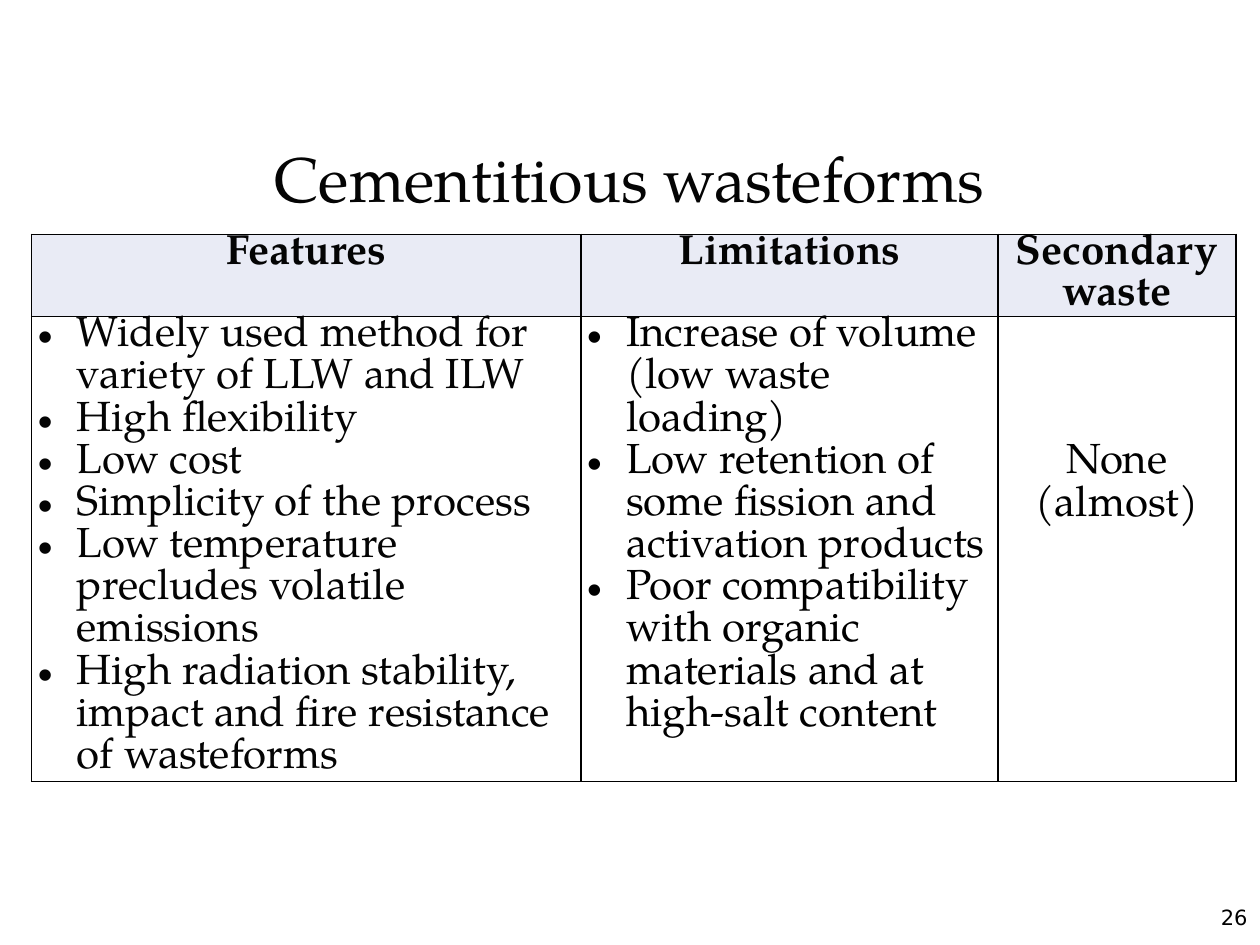
from lxml import etree
from pptx import Presentation
from pptx import util as u
from pptx.dml.color import RGBColor
from pptx.enum import text
from pptx.oxml.ns import qn

COLORS = {"ink": "040404", "black": "000000", "header": "E9EBF5"}
SERIF, SANS = "TeX Gyre Pagella", "DejaVu Sans"
WIDTH, HEIGHT = u.Inches(10), u.Inches(7.5)
COLUMNS = (4.36, 3.31, 1.89)
ROWS = (0.65, 3.69)
HEADERS = ("Features", "Limitations", "Secondary waste")
FEATURES = (
    "Widely used method for variety of LLW and ILW",
    "High flexibility",
    "Low cost",
    "Simplicity of the process",
    "Low temperature precludes volatile emissions",
    "High radiation stability, impact and fire resistance of wasteforms",
)
LIMITATIONS = (
    "Increase of volume (low waste loading)",
    "Low retention of some fission and activation products",
    "Poor compatibility with organic materials and at high-salt content",
)
LEFT, CENTER, RIGHT = (text.PP_ALIGN.LEFT, text.PP_ALIGN.CENTER,
                       text.PP_ALIGN.RIGHT)


def share(left, top, width, height):
    """Turn shares of the slide's size into a box of lengths."""
    return (int(left * WIDTH), int(top * HEIGHT),
            int(width * WIDTH), int(height * HEIGHT))


def set_all(obj, values):
    """Set each attribute named in a dict of format values."""
    for name, value in values.items():
        setattr(obj, name, value)


def add_bullet(p, indent):
    """Give a paragraph a round bullet with a hanging indent."""
    pPr = p._p.get_or_add_pPr()
    pPr.set("marL", str(indent))
    pPr.set("indent", str(-indent))
    etree.SubElement(pPr, qn("a:buFont"), typeface="Arial")
    etree.SubElement(pPr, qn("a:buChar"), char="•")


def write(tf, lines, color, font, para, bullets=False):
    """Fill a text frame with equally formatted paragraphs."""
    for i, line in enumerate(lines):
        p = tf.paragraphs[0] if i == 0 else tf.add_paragraph()
        set_all(p, {"space_before": u.Pt(0), "space_after": u.Pt(0), **para})
        if bullets:
            add_bullet(p, u.Inches(0.31))
        r = p.add_run()
        r.text = line
        set_all(r.font, font)
        r.font.color.rgb = RGBColor.from_string(COLORS[color])


def add_borders(cell):
    """Draw a thin black line on each side of a cell."""
    tcPr = cell._tc.get_or_add_tcPr()
    for i, side in enumerate(("lnL", "lnR", "lnT", "lnB")):
        ln = etree.Element(qn(f"a:{side}"), w=str(u.Pt(1)))
        fill = etree.SubElement(ln, qn("a:solidFill"))
        etree.SubElement(fill, qn("a:srgbClr"), val=COLORS["black"])
        tcPr.insert(i, ln)


def add_title(s, box):
    """Place the slide title in its placeholder."""
    sp = s.shapes.title
    set_all(sp, dict(zip(("left", "top", "width", "height"), box)))
    tf = sp.text_frame
    set_all(tf, {"word_wrap": True, "auto_size": text.MSO_AUTO_SIZE.NONE,
                 "vertical_anchor": text.MSO_ANCHOR.TOP})
    write(tf, ["Cementitious wasteforms"], "ink",
          {"size": u.Pt(36), "name": SERIF},
          {"alignment": CENTER, "line_spacing": u.Pt(44)})


def fill_cell(cell, lines, color, align, bold=False, bullets=False, top=0):
    """Format one table cell and write its text."""
    set_all(cell, {"margin_left": u.Inches(0.05),
                   "margin_right": u.Inches(0.05),
                   "margin_top": u.Inches(top), "margin_bottom": 0,
                   "vertical_anchor": text.MSO_ANCHOR.TOP})
    if bold:
        cell.fill.solid()
        cell.fill.fore_color.rgb = RGBColor.from_string(COLORS["header"])
    else:
        cell.fill.background()
    add_borders(cell)
    write(cell.text_frame, lines, color,
          {"size": u.Pt(24), "name": SERIF, "bold": bold},
          {"alignment": align, "line_spacing": u.Pt(23.4 if bold else 24.1)},
          bullets)


def add_comparison(s, box):
    """Place the table of features, limitations and secondary waste."""
    table = s.shapes.add_table(len(ROWS), len(COLUMNS), *box).table
    for column, share_of_width in zip(table.columns, COLUMNS):
        column.width = int(box[2] * share_of_width / sum(COLUMNS))
    for row, share_of_height in zip(table.rows, ROWS):
        row.height = int(box[3] * share_of_height / sum(ROWS))
    for i, header in enumerate(HEADERS):
        fill_cell(table.cell(0, i), [header], "ink", CENTER, bold=True)
    fill_cell(table.cell(1, 0), FEATURES, "ink", LEFT, bullets=True)
    fill_cell(table.cell(1, 1), LIMITATIONS, "black", LEFT, bullets=True)
    fill_cell(table.cell(1, 2), ["None (almost)"], "black", CENTER, top=1.01)


def add_number(s, box):
    """Place the slide number in the lower right corner."""
    tf = s.shapes.add_textbox(*box).text_frame
    set_all(tf, {"word_wrap": True, "vertical_anchor": text.MSO_ANCHOR.MIDDLE})
    write(tf, ["26"], "black", {"size": u.Pt(12), "name": SANS},
          {"alignment": RIGHT})


def main():
    """Build and save the slide."""
    prs = Presentation()
    set_all(prs, {"slide_width": WIDTH, "slide_height": HEIGHT})
    s = prs.slides.add_slide(prs.slide_layouts[5])
    add_number(s, share(0.775, 0.944, 0.225, 0.053))
    add_comparison(s, share(0.025, 0.248, 0.956, 0.579))
    add_title(s, share(0.031, 0.139, 0.937, 0.095))
    prs.save("out.pptx")


if __name__ == "__main__":
    main()
